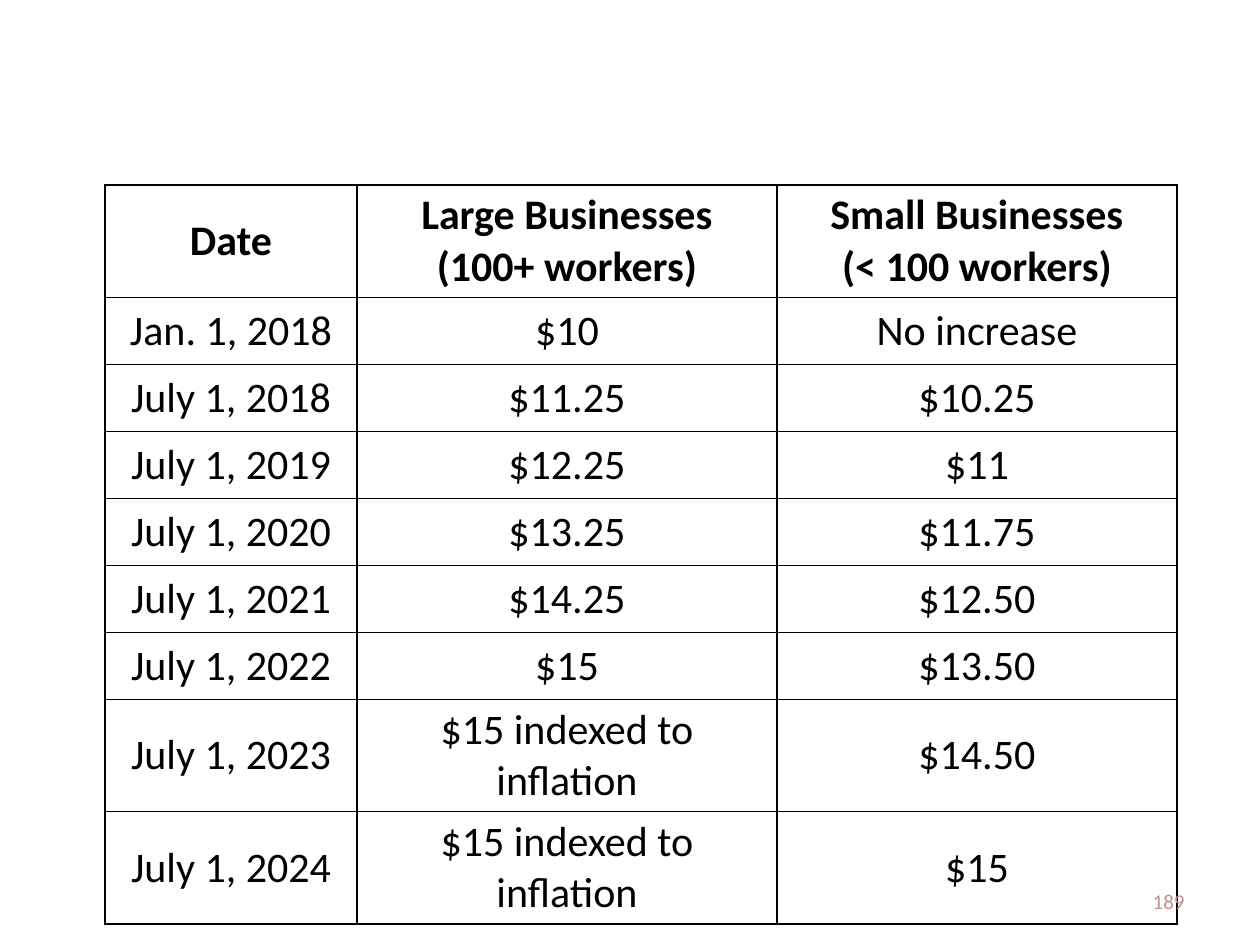
from lxml import etree
from pptx import Presentation
from pptx.dml.color import RGBColor
from pptx.enum.text import MSO_ANCHOR, PP_ALIGN
from pptx.oxml.ns import qn
from pptx.util import Pt

PX = 914400 // 126
BLACK = RGBColor(0x00, 0x00, 0x00)
ROSE = RGBColor(0xBB, 0x94, 0x91)
MIDDLE = MSO_ANCHOR.MIDDLE
CENTER, RIGHT = PP_ALIGN.CENTER, PP_ALIGN.RIGHT

ROWS = [
    ("Date", "Large Businesses\n(100+ workers)", "Small Businesses\n(< 100 workers)"),
    ("Jan. 1, 2018", "$10", "No increase"),
    ("July 1, 2018", "$11.25", "$10.25"),
    ("July 1, 2019", "$12.25", "$11"),
    ("July 1, 2020", "$13.25", "$11.75"),
    ("July 1, 2021", "$14.25", "$12.50"),
    ("July 1, 2022", "$15", "$13.50"),
    ("July 1, 2023", "$15 indexed to inflation", "$14.50"),
    ("July 1, 2024", "$15 indexed to inflation", "$15"),
]
WIDTHS = [252, 420, 400]
HEIGHTS = [107] + [67] * 6 + [107] * 2


def style(frame, align, size, color, bold=False):
    for para in frame.paragraphs:
        para.alignment = align
        for run in para.runs:
            font = run.font
            font.name, font.size, font.bold = "Calibri", Pt(size), bold
            font.color.rgb = color


def add_borders(cell):
    props = cell._tc.get_or_add_tcPr()
    for i, side in enumerate(("lnL", "lnR", "lnT", "lnB")):
        line = etree.Element(qn(f"a:{side}"), w=str(Pt(1)))
        fill = etree.SubElement(line, qn("a:solidFill"))
        etree.SubElement(fill, qn("a:srgbClr"), val=str(BLACK))
        props.insert(i, line)


prs = Presentation()
prs.slide_width, prs.slide_height = 1260 * PX, 945 * PX
slide = prs.slides.add_slide(prs.slide_layouts[6])

frame = slide.shapes.add_table(
    len(ROWS), len(WIDTHS), 105 * PX, 185 * PX, sum(WIDTHS) * PX, sum(HEIGHTS) * PX
)
table = frame.table
table.horz_banding = False
for col, width in zip(table.columns, WIDTHS):
    col.width = width * PX
for r, (texts, height) in enumerate(zip(ROWS, HEIGHTS)):
    table.rows[r].height = height * PX
    for c, text in enumerate(texts):
        cell = table.cell(r, c)
        cell.text_frame.text = text
        cell.vertical_anchor = MIDDLE
        cell.margin_left = cell.margin_right = 10 * PX
        cell.margin_top = cell.margin_bottom = 5 * PX
        cell.fill.background()
        add_borders(cell)
        style(cell.text_frame, CENTER, 24, BLACK, bold=r == 0)

number = slide.shapes.add_textbox(903 * PX, 876 * PX, 294 * PX, 50 * PX).text_frame
number.word_wrap = True
number.vertical_anchor = MIDDLE
number.text = "189"
style(number, RIGHT, 12, ROSE)

prs.save("out.pptx")
